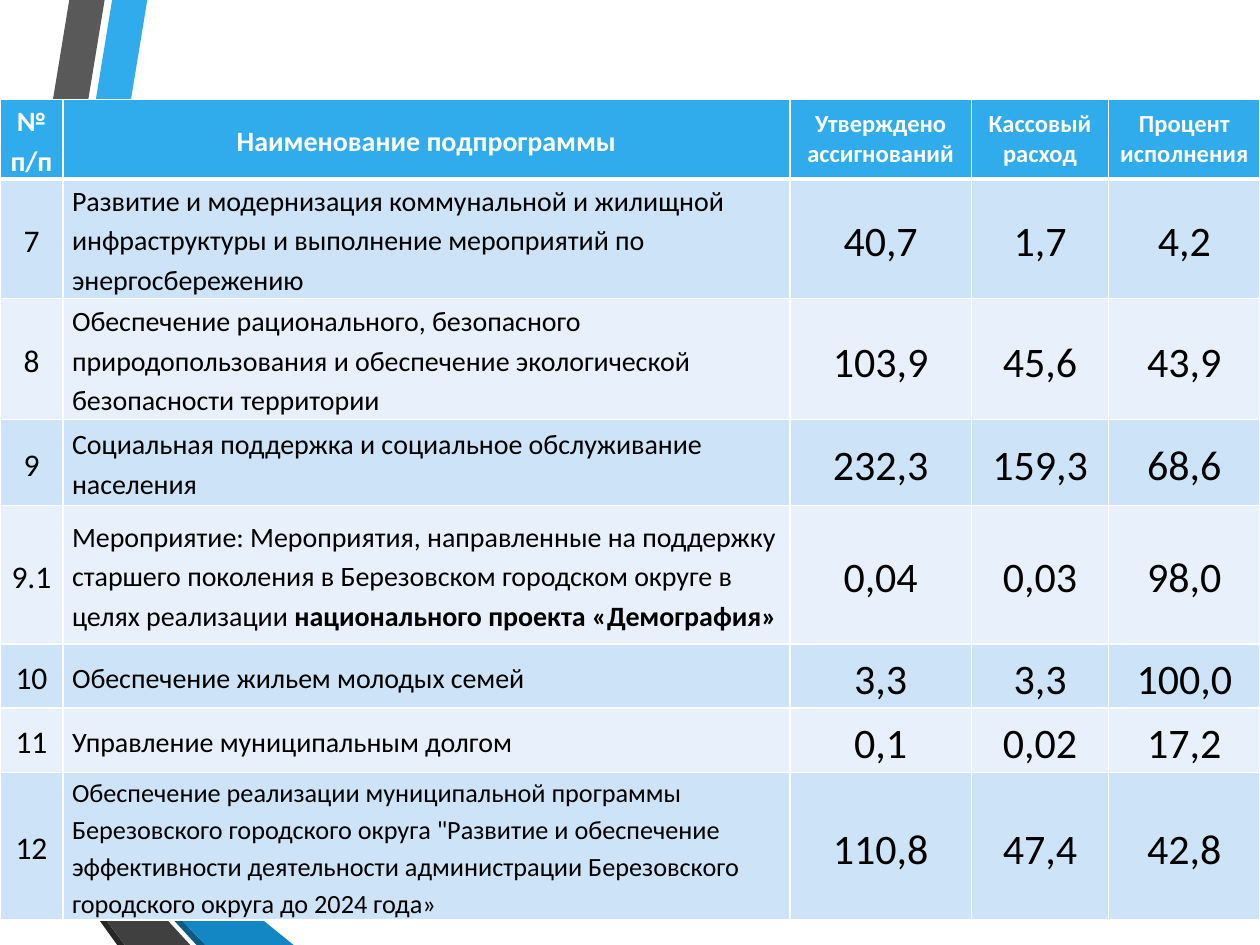
from dataclasses import dataclass

import pptx
import pptx.dml.color
import pptx.enum.text
import pptx.oxml
import pptx.oxml.ns
import pptx.util

Pt = pptx.util.Pt
ALIGN = pptx.enum.text.PP_ALIGN


@dataclass(frozen=True)
class Theme:
    font: str = "Calibri"
    accent: str = "30ACEC"
    accent_mid: str = "1287C3"
    accent_dark: str = "0C5A82"
    grey: str = "595959"
    grey_mid: str = "404040"
    grey_dark: str = "262626"
    band_dark: str = "CDE3F8"
    band_light: str = "E8F1FB"
    white: str = "FFFFFF"
    black: str = "000000"
    head_size: float = 16
    head_small: float = 14
    number_size: float = 18
    name_size: float = 16
    long_name_size: float = 15
    value_size: float = 24
    spacing: float = 1.15


THEME = Theme()


@dataclass(frozen=True)
class Ribbon:
    color: str
    points: tuple[tuple[float, float], ...]


@dataclass(frozen=True)
class Subprogram:
    number: str
    name: str
    values: tuple[str, str, str]
    height: float
    bold_tail: str = ""
    name_size: float = THEME.name_size


@dataclass(frozen=True)
class CellStyle:
    size: float
    fill: str
    color: str = THEME.black
    bold: bool = False
    align: ALIGN = ALIGN.CENTER
    spacing: float | None = THEME.spacing
    bottom_line: float = 1


RIBBONS = (
    Ribbon(THEME.accent, ((0, 391.7), (0, 414), (15.8, 416.9), (84.2, 0), (64.1, 0))),
    Ribbon(THEME.grey, ((59.8, 0), (39.6, 0), (0, 241.9), (0, 364.3))),
    Ribbon(THEME.grey_dark, ((0, 445.7), (0, 447.1), (67, 540), (71.3, 540))),
    Ribbon(THEME.accent_dark, ((0, 416.9), (0, 417.6), (112.3, 540), (117.4, 540))),
    Ribbon(THEME.accent_mid, ((0, 414), (0, 416.9), (117.4, 540), (167.8, 540), (15.8, 416.9))),
    Ribbon(THEME.grey_mid, ((0, 421.9), (0, 445.7), (71.3, 540), (108.7, 540))),
)

COLUMNS = (36, 415.4, 103.7, 78.5, 86.4)
TABLE_TOP = 56.9
HEAD_HEIGHT = 45.4
HEADINGS = ("№ п/п", "Наименование подпрограммы", "Утверждено ассигнований",
            "Кассовый расход", "Процент исполнения")
SUBPROGRAMS = (
    Subprogram("7", "Развитие и модернизация коммунальной и жилищной инфраструктуры "
               "и выполнение мероприятий по энергосбережению", ("40,7", "1,7", "4,2"), 68.4),
    Subprogram("8", "Обеспечение рационального, безопасного природопользования "
               "и обеспечение экологической безопасности территории",
               ("103,9", "45,6", "43,9"), 69.1),
    Subprogram("9", "Социальная поддержка и социальное обслуживание населения",
               ("232,3", "159,3", "68,6"), 49),
    Subprogram("9.1", "Мероприятие: Мероприятия, направленные на поддержку старшего "
               "поколения в Березовском городском округе в целях реализации ",
               ("0,04", "0,03", "98,0"), 79.2,
               bold_tail="национального проекта «Демография»"),
    Subprogram("10", "Обеспечение жильем молодых семей", ("3,3", "3,3", "100,0"), 36.7),
    Subprogram("11", "Управление муниципальным долгом", ("0,1", "0,02", "17,2"), 36.7),
    Subprogram("12", "Обеспечение реализации муниципальной программы Березовского "
               'городского округа "Развитие и обеспечение эффективности деятельности '
               "администрации Березовского городского округа до 2024 года»",
               ("110,8", "47,4", "42,8"), 84, name_size=THEME.long_name_size),
)


def rgb(color: str) -> pptx.dml.color.RGBColor:
    return pptx.dml.color.RGBColor.from_string(color)


def draw_ribbon(s: pptx.slide.Slide, ribbon: Ribbon) -> None:
    start, *rest = [(Pt(x), Pt(y)) for x, y in ribbon.points]
    builder = s.shapes.build_freeform(*start)
    builder.add_line_segments(rest, close=True)
    sp = builder.convert_to_shape()
    sp.shadow.inherit = False
    sp.fill.solid()
    sp.fill.fore_color.rgb = rgb(ribbon.color)
    sp.line.fill.background()


def set_borders(cell: pptx.table._Cell, bottom: float, top: float) -> None:
    tc_pr = cell._tc.get_or_add_tcPr()
    for side, width in (("L", 1), ("R", 1), ("T", top), ("B", bottom)):
        tc_pr.append(pptx.oxml.parse_xml(
            f'<a:ln{side} {pptx.oxml.ns.nsdecls("a")} w="{Pt(width)}"><a:solidFill>'
            f'<a:srgbClr val="{THEME.white}"/></a:solidFill></a:ln{side}>'))


def fill_cell(cell: pptx.table._Cell, text: str, style: CellStyle,
              bold_tail: str = "", top_line: float = 1) -> None:
    set_borders(cell, style.bottom_line, top_line)
    cell.fill.solid()
    cell.fill.fore_color.rgb = rgb(style.fill)
    cell.vertical_anchor = pptx.enum.text.MSO_ANCHOR.MIDDLE
    cell.margin_left = cell.margin_right = Pt(5.2)
    cell.margin_top = cell.margin_bottom = Pt(0)
    p = cell.text_frame.paragraphs[0]
    p.alignment = style.align
    if style.spacing:
        p.line_spacing = style.spacing
    # Runs carry the font because table text does not follow paragraph defaults
    for part, bold in ((text, style.bold), (bold_tail, True)):
        if part:
            r = p.add_run()
            r.text = part
            r.font.name = THEME.font
            r.font.size = Pt(style.size)
            r.font.bold = bold
            r.font.color.rgb = rgb(style.color)


def draw_table(s: pptx.slide.Slide) -> None:
    heights = [HEAD_HEIGHT] + [item.height for item in SUBPROGRAMS]
    table = s.shapes.add_table(len(heights), len(COLUMNS), Pt(0), Pt(TABLE_TOP),
                               Pt(sum(COLUMNS)), Pt(sum(heights))).table
    for column, width in zip(table.columns, COLUMNS):
        column.width = Pt(width)
    for row, height in zip(table.rows, heights):
        row.height = Pt(height)

    # Heading row
    for col, heading in enumerate(HEADINGS):
        wide = col < 2
        style = CellStyle(THEME.head_size if wide else THEME.head_small, THEME.accent,
                          THEME.white, bold=True, bottom_line=3,
                          spacing=THEME.spacing if wide else None)
        fill_cell(table.cell(0, col), heading, style)

    # Subprogram rows in alternating bands
    for row, item in enumerate(SUBPROGRAMS, start=1):
        band = THEME.band_dark if row % 2 else THEME.band_light
        top = 3 if row == 1 else 1
        fill_cell(table.cell(row, 0), item.number,
                  CellStyle(THEME.number_size, band), top_line=top)
        fill_cell(table.cell(row, 1), item.name,
                  CellStyle(item.name_size, band, align=ALIGN.LEFT), item.bold_tail, top)
        for col, value in enumerate(item.values, start=2):
            fill_cell(table.cell(row, col), value,
                      CellStyle(THEME.value_size, band), top_line=top)


def main() -> None:
    prs = pptx.Presentation()
    prs.slide_width, prs.slide_height = Pt(720), Pt(540)
    s = prs.slides.add_slide(prs.slide_layouts[6])
    # Ribbons behind the table
    for ribbon in RIBBONS:
        draw_ribbon(s, ribbon)
    draw_table(s)
    prs.save("out.pptx")


if __name__ == "__main__":
    main()
